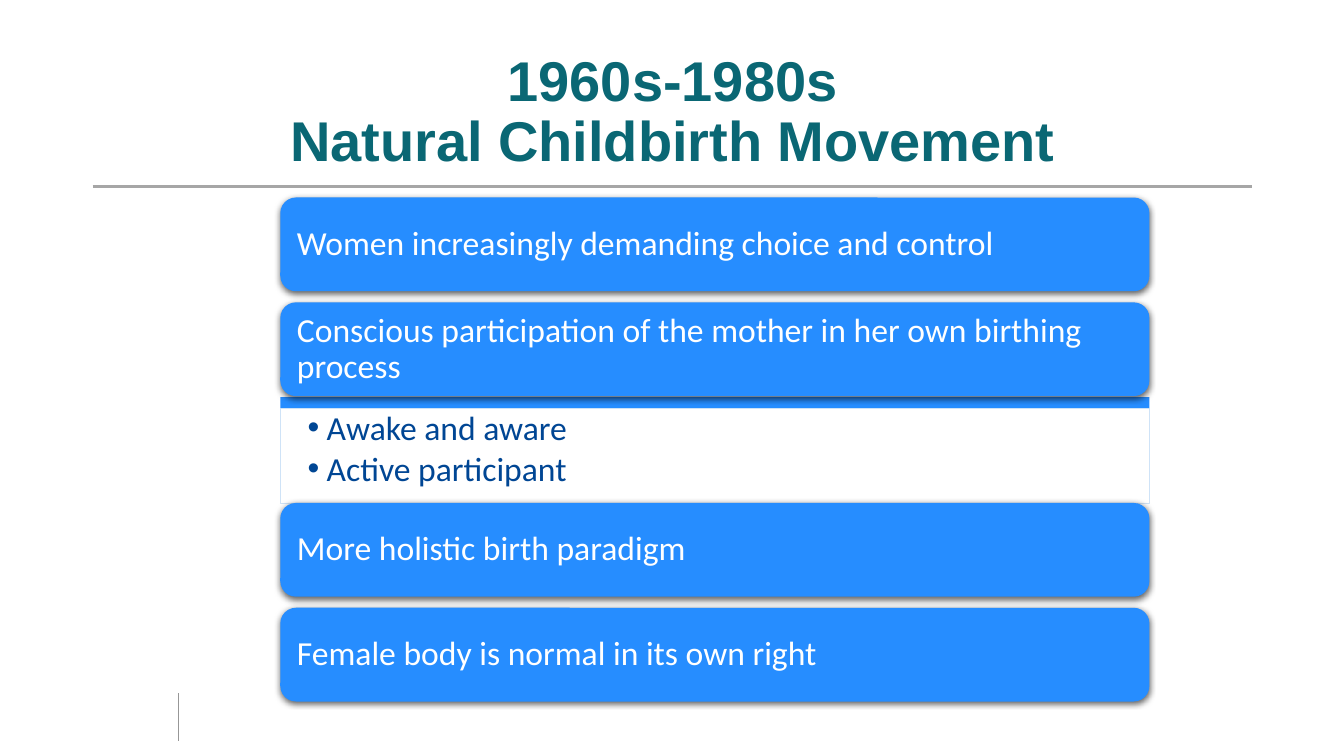
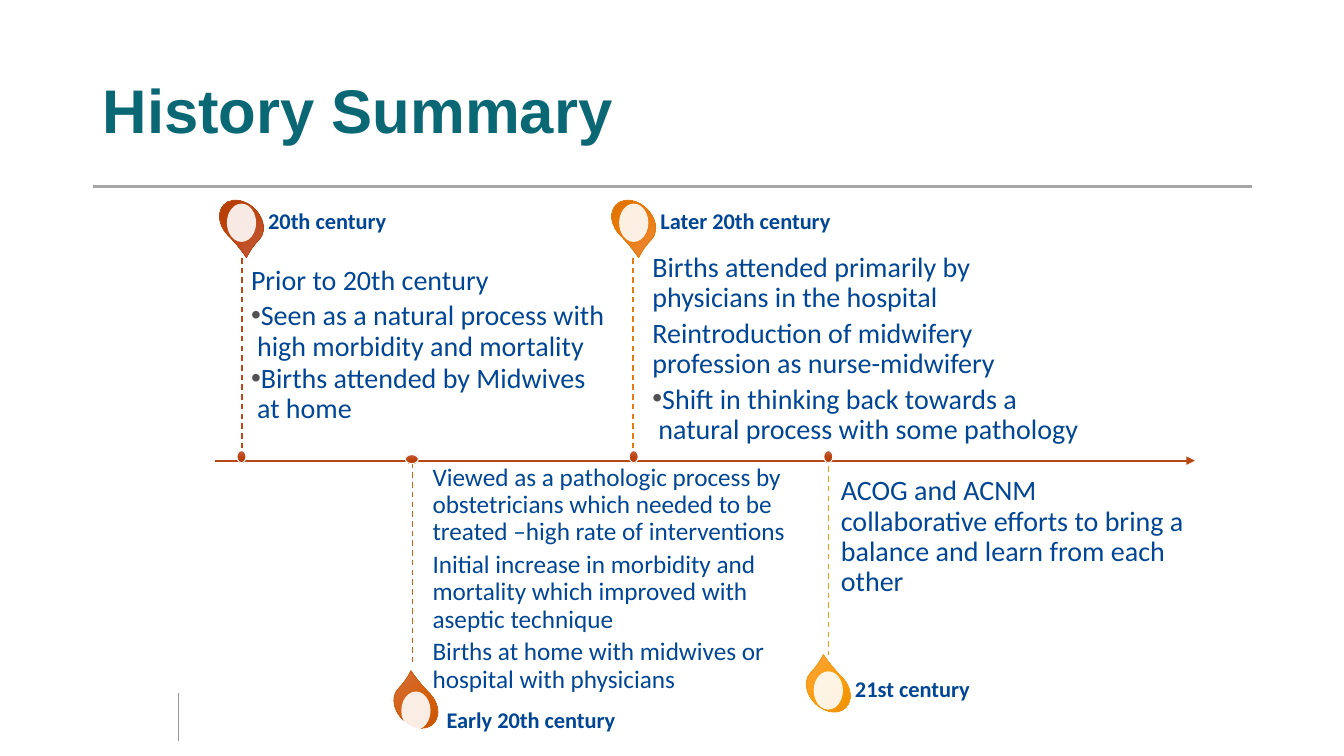
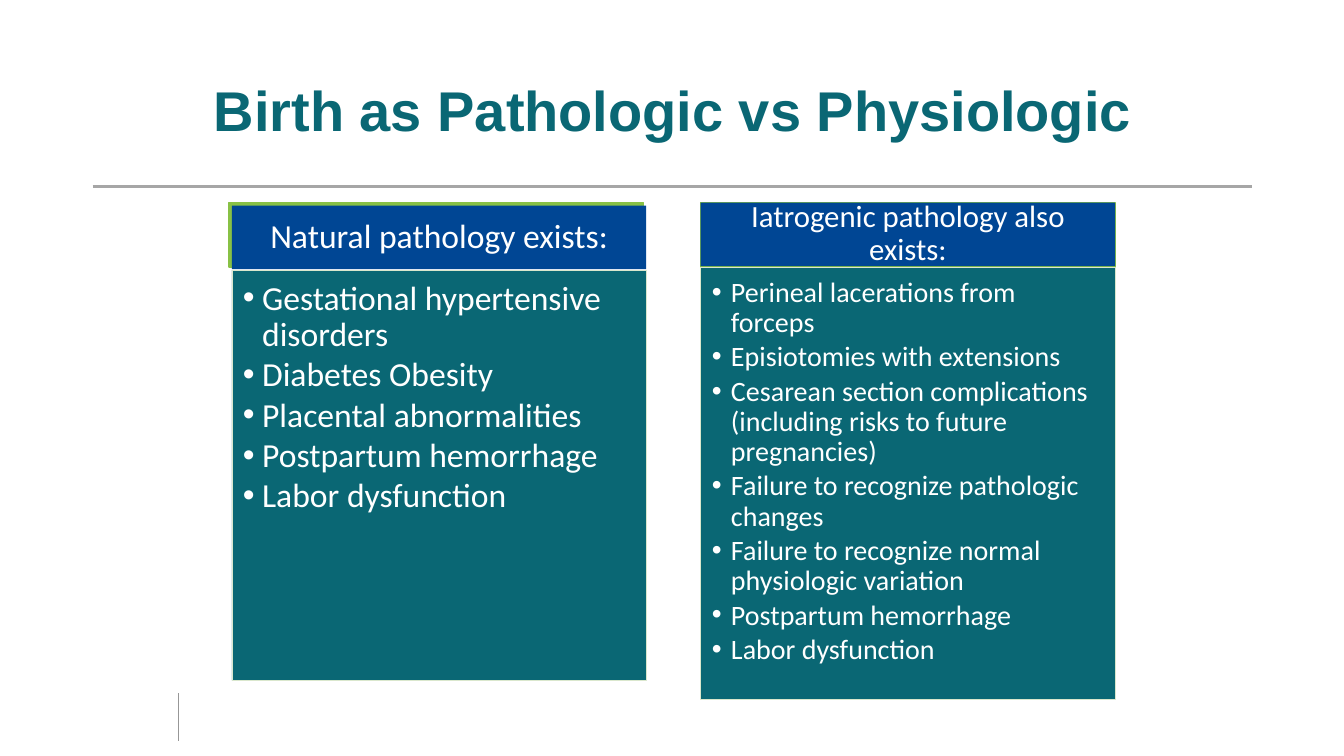
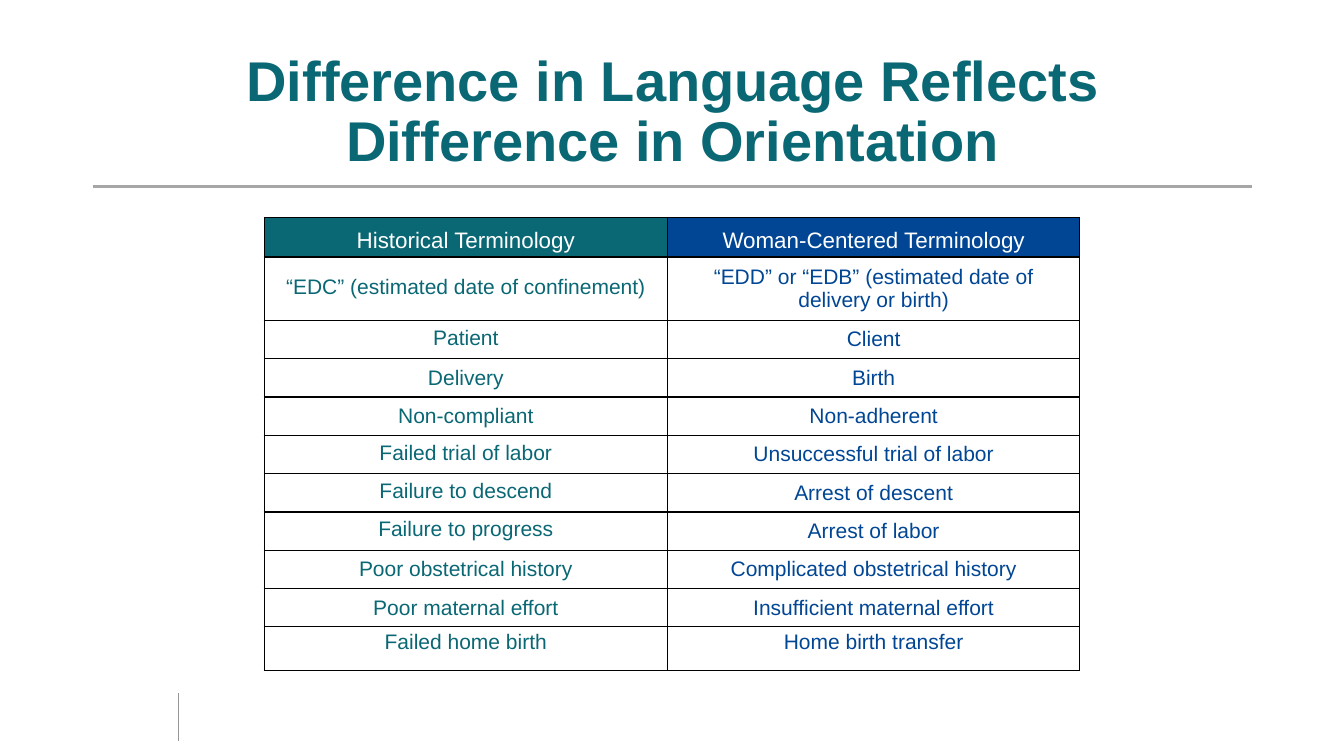
from dataclasses import dataclass

from lxml import etree
from pptx import Presentation
from pptx.dml.color import RGBColor
from pptx.enum.dml import MSO_LINE_DASH_STYLE as DASH
from pptx.enum.shapes import MSO_CONNECTOR as CONNECTOR, MSO_SHAPE as SHAPE
from pptx.enum.text import MSO_ANCHOR as ANCHOR, PP_ALIGN as ALIGN
from pptx.oxml.ns import qn
from pptx.util import Inches, Pt

# Shared look
TEAL, NAVY, SKY, WHITE, BLACK = "0A6774", "004694", "268DFF", "FFFFFF", "000000"
GREEN, PALE, RUST, GREY = "88C145", "DAE7CD", "B74816", "525252"
HEADING, BODY = "Arial", "Calibri"
NODE_SHADES = ("C16149", "BE4510", "AF3A07")


@dataclass
class Para:
    text: str
    before: float = 0
    bullet: str = ""
    margin: float = 0
    indent: float = 0


@dataclass
class Event:
    label: str
    label_at: tuple
    drop_at: tuple
    disc_drop: float
    rotation: int
    colour: str
    shades: tuple
    stem: tuple
    node: tuple
    text_at: tuple
    insets: tuple
    anchor: ANCHOR
    size: int
    paras: list


def rgb(value):
    return RGBColor.from_string(value)


def child(parent, tag, **attributes):
    node = etree.SubElement(parent, qn(tag))
    for name, value in attributes.items():
        node.set(name, str(value))
    return node


# Text
def style_paragraph(paragraph, item, size, colour, font, bold, align, spacing):
    paragraph.text = item.text
    properties = paragraph._p.get_or_add_pPr()
    if item.bullet:
        properties.set("marL", str(Inches(item.margin)))
        properties.set("indent", str(Inches(item.indent)))
        child(child(properties, "a:buClr"), "a:srgbClr", val=item.bullet)
        child(properties, "a:buFont", typeface="Arial")
        child(properties, "a:buChar", char="•")
    paragraph.alignment = align
    paragraph.line_spacing = spacing
    if item.before:
        paragraph.space_before = Pt(item.before)
    paragraph.font.name = font
    paragraph.font.size = Pt(size)
    paragraph.font.bold = bold
    paragraph.font.color.rgb = rgb(colour)


def write(shape, paras, size, colour, insets, anchor=ANCHOR.TOP, font=BODY,
          bold=False, align=ALIGN.LEFT, spacing=0.9):
    frame = shape.text_frame
    frame.word_wrap = True
    frame.vertical_anchor = anchor
    (frame.margin_left, frame.margin_top,
     frame.margin_right, frame.margin_bottom) = map(Inches, insets)
    for number, item in enumerate(paras):
        paragraph = frame.add_paragraph() if number else frame.paragraphs[0]
        style_paragraph(paragraph, item, size, colour, font, bold, align, spacing)


def add_text(page, at, paras, size, colour, insets, **options):
    box = page.shapes.add_textbox(*map(Inches, at))
    write(box, paras, size, colour, insets, **options)


def bullets(texts, colour, before):
    return [Para(text, before if number else 0, colour, 0.19, -0.19)
            for number, text in enumerate(texts)]


# Shapes and lines
def add_block(page, kind, at, fill, line=None, width=0.75):
    block = page.shapes.add_shape(kind, *map(Inches, at))
    block.shadow.inherit = False
    block.fill.solid()
    block.fill.fore_color.rgb = rgb(fill)
    if line:
        block.line.color.rgb = rgb(line)
        block.line.width = Pt(width)
    else:
        block.line.fill.background()
    return block


def add_shaded(page, kind, at, shades, line):
    block = add_block(page, kind, at, shades[1], line)
    solid = block._element.spPr.find(qn("a:solidFill"))
    gradient = etree.Element(qn("a:gradFill"))
    stops = child(gradient, "a:gsLst")
    for number, shade in enumerate(shades):
        stop = child(stops, "a:gs", pos=number * 50000)
        child(stop, "a:srgbClr", val=shade)
    child(gradient, "a:lin", ang=5400000, scaled=0)
    solid.getparent().replace(solid, gradient)
    return block


def add_soft_shadow(block):
    effects = block._element.spPr.find(qn("a:effectLst"))
    shadow = child(effects, "a:outerShdw", blurRad=Pt(4.5), dist=Pt(1.5),
                   dir=5400000, algn="ctr", rotWithShape=0)
    child(child(shadow, "a:srgbClr", val=BLACK), "a:alpha", val=62000)


def add_line(page, ends, colour, width, dash=None, arrow=False):
    line = page.shapes.add_connector(CONNECTOR.STRAIGHT, *map(Inches, ends))
    line.line.color.rgb = rgb(colour)
    line.line.width = Pt(width)
    if dash:
        line.line.dash_style = dash
    if arrow:
        child(line.line._get_or_add_ln(), "a:tailEnd", type="triangle")
    child(line._element.spPr, "a:effectLst")


def add_page(deck, title, size=40, align=ALIGN.CENTER):
    page = deck.slides.add_slide(deck.slide_layouts[6])
    add_line(page, (1.77, 6.88, 1.77, 7.35), "979797", 0.5)
    add_line(page, (0.92, 1.85, 12.42, 1.85), "A6A6A6", 2.5)
    add_text(page, (0.92, 0.4, 11.5, 1.45), [Para(title)], size, TEAL,
             (0.1, 0.05, 0.1, 0.05), anchor=ANCHOR.MIDDLE, font=HEADING,
             bold=True, align=align)
    return page


# Slide 1: stacked bars
def build_movement(deck):
    page = add_page(deck, "1960s-1980s\nNatural Childbirth Movement")
    left, width, height, gap = 2.78, 8.62, 0.93, 0.11
    groups = [(1.96, ("Women increasingly demanding choice and control",
                      "Conscious participation of the mother in her own birthing process")),
              (4.99, ("More holistic birth paradigm",
                      "Female body is normal in its own right"))]
    add_block(page, SHAPE.RECTANGLE, (left, 3.94, width, 1.05), SKY)
    detail = add_block(page, SHAPE.RECTANGLE, (left, 4.05, width, 0.94), WHITE,
                       "CFE3F7", 0.5)
    write(detail, bullets(("Awake and aware", "Active participant"), NAVY, 3.4),
          24, NAVY, (0.27, 0.03, 0.17, 0.03))
    for top, texts in groups:
        for number, text in enumerate(texts):
            bar = add_block(page, SHAPE.ROUNDED_RECTANGLE,
                            (left, top + number * (height + gap), width, height), SKY)
            add_soft_shadow(bar)
            write(bar, [Para(text)], 24, WHITE, (0.12, 0.09, 0.12, 0.09),
                  anchor=ANCHOR.MIDDLE)


# Slide 2: timeline
EVENTS = [
    Event("20th century", (2.66, 1.86), (2.21, 1.96), 0.06, 135, RUST,
          ("C16149", "BF440C", "AF3A03"), (2.4, 2.56, 4.53), (2.35, 4.47, 0.09, 0.12),
          (2.49, 2.56, 3.6, 1.97), (0, 0.08, 0.08, 0.11), ANCHOR.TOP, 20,
          [Para("Prior to 20th century"),
           Para("Seen as a natural process with high morbidity and mortality",
                3.9, GREY, 0.06, -0.06),
           Para("Births attended by Midwives at home", 1.4, GREY, 0.06, -0.06)]),
    Event("Early 20th century", (4.43, 6.81), (3.94, 6.76), 0.1, 315, "CC6014",
          ("D57248", "D55E09", "C35200"), (4.09, 4.59, 6.57), (4.02, 4.51, 0.13, 0.09),
          (4.29, 4.99, 3.62, 1.97), (0, 0.11, 0, 0.08), ANCHOR.BOTTOM, 18,
          [Para("Viewed as a pathologic process by obstetricians which needed "
                "to be treated –high rate of interventions"),
           Para("Initial increase in morbidity and mortality which improved "
                "with aseptic technique", 3.9),
           Para("Births at home with midwives or hospital with physicians", 3.9)]),
    Event("Later 20th century", (6.55, 1.86), (6.1, 1.96), 0.06, 135, "E27C11",
          ("EA8A48", "EC7B05", "D96C00"), (6.28, 2.56, 4.53), (6.24, 4.47, 0.09, 0.12),
          (6.47, 2.43, 4.42, 1.97), (0, 0.08, 0.08, 0.11), ANCHOR.TOP, 20,
          [Para("Births attended primarily by physicians in the hospital"),
           Para("Reintroduction of midwifery profession as nurse-midwifery", 3.9),
           Para("Shift in thinking back towards a natural process with some pathology",
                3.9, GREY, 0.06, -0.07)]),
    Event("21st century", (8.48, 6.5), (8.03, 6.6), 0.06, 315, "F39B14",
          ("F7A549", "FE9D08", "E38C00"), (8.22, 4.53, 6.5), (8.17, 4.47, 0.09, 0.12),
          (8.34, 4.58, 3.44, 1.43), (0, 0.11, 0, 0.08), ANCHOR.BOTTOM, 20,
          [Para("ACOG and ACNM collaborative efforts to bring a balance "
                "and learn from each other")]),
]


def add_event(page, event):
    left, top = event.drop_at
    drop = add_shaded(page, SHAPE.TEAR, (left, top, 0.37, 0.49), event.shades, event.colour)
    drop.adjustments[0] = 1.15
    drop.rotation = event.rotation
    disc = add_block(page, SHAPE.OVAL,
                     (left + 0.04, top + event.disc_drop, 0.29, 0.38), WHITE)
    tint = disc._element.spPr.find(qn("a:solidFill"))[0]
    child(tint, "a:alpha", val=89000)
    add_text(page, event.text_at, event.paras, event.size, NAVY, event.insets,
             anchor=event.anchor)
    add_text(page, (*event.label_at, 3.23, 0.69), [Para(event.label)], 16, NAVY,
             (0, 0, 0.1, 0), anchor=ANCHOR.MIDDLE, bold=True)
    x, start, end = event.stem
    add_line(page, (x, start, x, end), event.colour, 1, dash=DASH.DASH)
    add_shaded(page, SHAPE.OVAL, event.node, NODE_SHADES, WHITE)


def build_history(deck):
    page = add_page(deck, "History Summary", 44, ALIGN.LEFT)
    add_line(page, (2.13, 4.57, 11.85, 4.57), RUST, 1.5, arrow=True)
    for event in EVENTS:
        add_event(page, event)


# Slide 3: two panels
def add_panel(page, left, top, accent_left, height, header, header_size, texts, size):
    width, header_height = 4.11, 0.64
    add_block(page, SHAPE.RECTANGLE, (accent_left, 2.01, width, header_height),
              GREEN, GREEN, 1)
    body = add_block(page, SHAPE.RECTANGLE,
                     (left, top + header_height, width, height), TEAL, PALE, 0.5)
    write(body, bullets(texts, WHITE, 2.9), size, WHITE, (0.11, 0.11, 0.15, 0.17))
    head = add_block(page, SHAPE.RECTANGLE, (left, top, width, header_height - 0.01), NAVY)
    write(head, [Para(header)], header_size, WHITE, (0.15, 0.08, 0.15, 0.08),
          anchor=ANCHOR.MIDDLE, align=ALIGN.CENTER)


def build_pathology(deck):
    page = add_page(deck, "Birth as Pathologic vs Physiologic")
    shared = ("Postpartum hemorrhage", "Labor dysfunction")
    natural = ("Gestational hypertensive disorders", "Diabetes Obesity",
               "Placental abnormalities", *shared)
    iatrogenic = ("Perineal lacerations from forceps", "Episiotomies with extensions",
                  "Cesarean section complications (including risks to future pregnancies)",
                  "Failure to recognize pathologic changes",
                  "Failure to recognize normal physiologic variation", *shared)
    add_panel(page, 2.3, 2.04, 2.27, 4.07, "Natural pathology exists:", 24, natural, 24)
    add_panel(page, 6.95, 2.01, 6.95, 4.29, "Iatrogenic pathology also exists:", 22,
              iatrogenic, 20)


# Slide 4: terminology table
TERMS = [
    ("Historical Terminology", "Woman-Centered Terminology"),
    ("“EDC” (estimated date of confinement)",
     "“EDD” or “EDB” (estimated date of delivery or birth)"),
    ("Patient", "Client"),
    ("Delivery", "Birth"),
    ("Non-compliant", "Non-adherent"),
    ("Failed trial of labor", "Unsuccessful trial of labor"),
    ("Failure to descend", "Arrest of descent"),
    ("Failure to progress", "Arrest of labor"),
    ("Poor obstetrical history", "Complicated obstetrical history"),
    ("Poor maternal effort", "Insufficient maternal effort"),
    ("Failed home birth", "Home birth transfer"),
]
TIGHT_ROWS = (1, 2, 5, 6, 7)


def style_cell(cell, text, fill, size, colour, anchor, spacing):
    cell.vertical_anchor = anchor
    cell.margin_left = cell.margin_right = Inches(0.08)
    cell.margin_top = cell.margin_bottom = Inches(0.04)
    style_paragraph(cell.text_frame.paragraphs[0], Para(text), size, colour,
                    HEADING, False, ALIGN.CENTER, spacing)
    properties = cell._tc.get_or_add_tcPr()
    for side in ("a:lnL", "a:lnR", "a:lnT", "a:lnB"):
        border = child(properties, side, w=Pt(1))
        child(child(border, "a:solidFill"), "a:srgbClr", val=BLACK)
    cell.fill.solid()
    cell.fill.fore_color.rgb = rgb(fill)


def build_language(deck):
    page = add_page(deck, "Difference in Language Reflects Difference in Orientation")
    heights = [0.39, 0.63] + [0.38] * 8 + [0.43]
    last = len(TERMS) - 1
    table = page.shapes.add_table(len(TERMS), 2, *map(Inches, (2.62, 2.16, 8.09, 4.46))).table
    table.first_row = table.horz_banding = False
    for column, width in zip(table.columns, (4, 4.09)):
        column.width = Inches(width)
    for row, texts in enumerate(TERMS):
        table.rows[row].height = Inches(heights[row])
        anchor = {0: ANCHOR.BOTTOM, last: ANCHOR.TOP}.get(row, ANCHOR.MIDDLE)
        for column, (text, colour) in enumerate(zip(texts, (TEAL, NAVY))):
            fill, ink, size = (WHITE, colour, 15) if row else (colour, WHITE, 16)
            spacing = 0.8 if column == 0 and row in TIGHT_ROWS else 1.0
            style_cell(table.cell(row, column), text, fill, size, ink, anchor, spacing)


def main():
    deck = Presentation()
    deck.slide_width, deck.slide_height = Inches(13.33), Inches(7.5)
    build_movement(deck)
    build_history(deck)
    build_pathology(deck)
    build_language(deck)
    deck.save("out.pptx")


if __name__ == "__main__":
    main()
